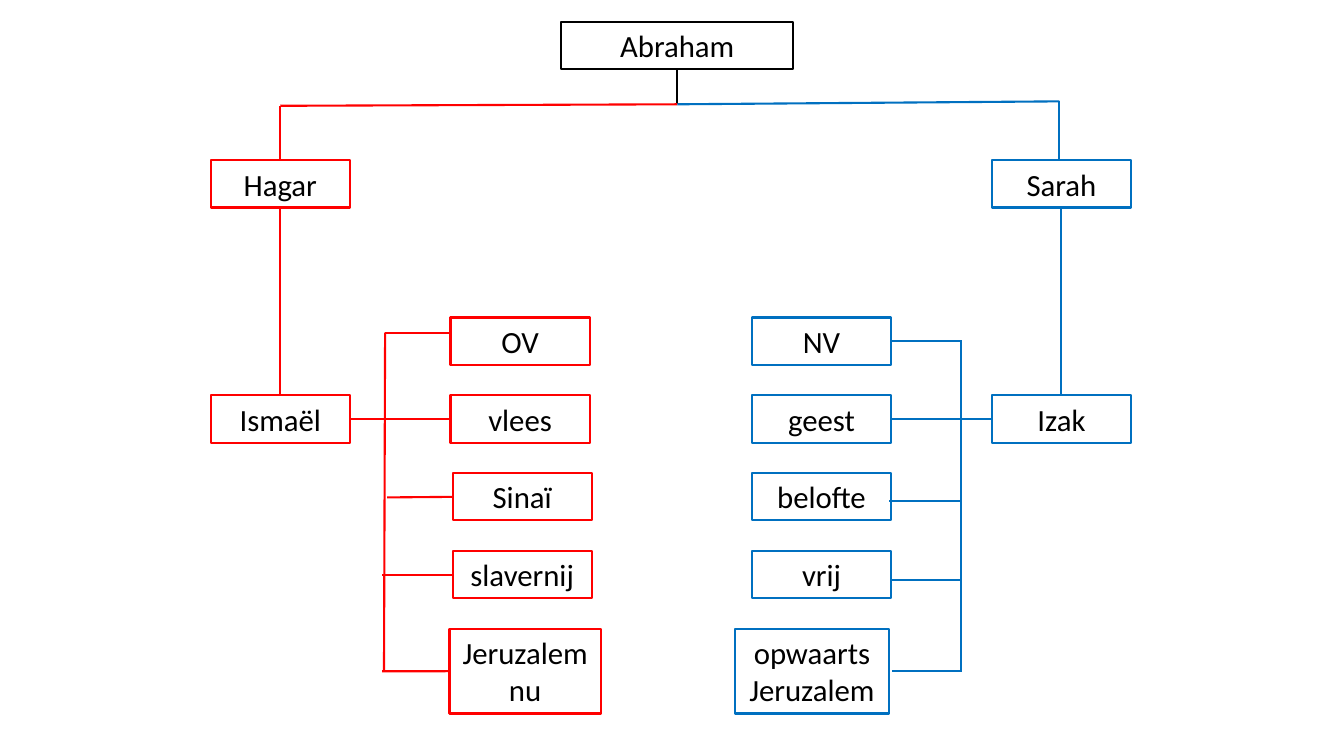
from dataclasses import dataclass
from typing import NamedTuple

from lxml.etree import SubElement
from pptx import Presentation
from pptx.dml.color import RGBColor
from pptx.enum.shapes import MSO_CONNECTOR, MSO_SHAPE
from pptx.enum.text import MSO_ANCHOR, MSO_AUTO_SIZE, PP_ALIGN
from pptx.oxml.ns import qn
from pptx.util import Pt


@dataclass(frozen=True)
class Theme:
    ink: RGBColor = RGBColor(0, 0, 0)
    red: RGBColor = RGBColor(0xFF, 0, 0)
    blue: RGBColor = RGBColor(0, 0x70, 0xC0)
    font: str = "Calibri"
    size: float = 22
    line: float = 1.5


THEME = Theme()
TOP, LEFT, BOTTOM, RIGHT = range(4)


@dataclass(frozen=True)
class Box:
    text: str
    tone: RGBColor
    x: float
    y: float
    w: float = 99.4
    h: float = 33.8


class Joint(NamedTuple):
    """The middle of one side of a named box."""
    name: str
    side: int


class Point(NamedTuple):
    x: float
    y: float


End = Joint | Point


class Link(NamedTuple):
    tone: RGBColor
    start: End
    end: End


FIRST, STEP = 226.8, 55.6
ROWS = [FIRST + STEP * i for i in range(5)]
WEST, EAST = 150.5, 708.5
FORK = Point(483.8, 74.5)
RED_TURN, BLUE_TURN = Point(200.2, 75.6), Point(756.7, 72.4)
RED_BUS, BLUE_BUS = 274.7, 686.2
FOOT = 479.5

BOXES = [
    Box("Abraham", THEME.ink, 401, 15.8, 165.6),
    Box("Hagar", THEME.red, WEST, 114.5),
    Box("Sarah", THEME.blue, EAST, 114.5),
    Box("Ismaël", THEME.red, WEST, ROWS[1]),
    Box("Izak", THEME.blue, EAST, ROWS[1]),
    *[Box(text, THEME.red, x, y) for text, x, y in zip(
        ("OV", "vlees", "Sinaï", "slavernij"),
        (321.8, 321.8, 323.3, 323.3), ROWS)],
    Box("Jeruzalem nu", THEME.red, 321.1, ROWS[4], 108, 60.5),
    *[Box(text, THEME.blue, 537.1, y) for text, y in zip(
        ("NV", "geest", "belofte", "vrij"), ROWS)],
    Box("opwaarts Jeruzalem", THEME.blue, 524.9, ROWS[4], 110.2, 60.5),
]

LINKS = [
    Link(THEME.ink, Joint("Abraham", BOTTOM), FORK),
    Link(THEME.red, FORK, RED_TURN),
    Link(THEME.red, RED_TURN, Joint("Hagar", TOP)),
    Link(THEME.blue, FORK, BLUE_TURN),
    Link(THEME.blue, BLUE_TURN, Point(BLUE_TURN.x, 114.5)),
    Link(THEME.red, Joint("Hagar", BOTTOM), Joint("Ismaël", TOP)),
    Link(THEME.blue, Joint("Sarah", BOTTOM), Joint("Izak", TOP)),
    Link(THEME.red, Joint("Ismaël", RIGHT), Joint("vlees", LEFT)),
    Link(THEME.blue, Joint("Izak", LEFT), Joint("geest", RIGHT)),
    Link(THEME.red, Point(RED_BUS + 0.4, 237.6), Point(RED_BUS - 0.4, FOOT)),
    Link(THEME.blue, Point(BLUE_BUS, 243.4), Point(BLUE_BUS, FOOT)),
    Link(THEME.red, Point(RED_BUS, 237.6), Point(321.8, 237.6)),
    Link(THEME.red, Point(276.5, 355.3), Joint("Sinaï", LEFT)),
    Link(THEME.red, Point(272.9, 410.5), Joint("slavernij", LEFT)),
    Link(THEME.red, Point(272.9, FOOT), Joint("Jeruzalem nu", LEFT)),
    *[Link(THEME.blue, Point(BLUE_BUS + 0.7, y), Point(x, y)) for x, y in (
        (636.5, 243.4), (635, 357.8), (636.5, 414), (637.2, FOOT))],
]


def put(target, values: dict) -> None:
    """Set each named attribute on the target."""
    for name, value in values.items():
        setattr(target, name, value)


def stroke(shape, tone: RGBColor) -> None:
    shape.line.color.rgb = tone
    shape.line.width = Pt(THEME.line)


def draw_box(slide, box: Box):
    shape = slide.shapes.add_shape(
        MSO_SHAPE.RECTANGLE, Pt(box.x), Pt(box.y), Pt(box.w), Pt(box.h))
    shape.shadow.inherit = False
    shape.fill.background()
    stroke(shape, box.tone)
    frame = shape.text_frame
    put(frame, {"word_wrap": True, "vertical_anchor": MSO_ANCHOR.TOP,
                "auto_size": MSO_AUTO_SIZE.SHAPE_TO_FIT_TEXT})
    line = frame.paragraphs[0]
    put(line, {"text": box.text, "alignment": PP_ALIGN.CENTER})
    font = line.runs[0].font
    put(font, {"name": THEME.font, "size": Pt(THEME.size)})
    font.color.rgb = THEME.ink
    return shape


def draw_link(slide, link: Link, shapes: dict) -> None:
    spots = [Pt(v) for end in (link.start, link.end)
             for v in (end if isinstance(end, Point) else (0, 0))]
    wire = slide.shapes.add_connector(MSO_CONNECTOR.STRAIGHT, *spots)
    for end, join in ((link.start, wire.begin_connect),
                      (link.end, wire.end_connect)):
        if isinstance(end, Joint):
            join(shapes[end.name], end.side)
    stroke(wire, link.tone)
    SubElement(wire._element.spPr, qn("a:effectLst"))


def main() -> None:
    deck = Presentation()
    put(deck, {"slide_width": Pt(960), "slide_height": Pt(540)})
    slide = deck.slides.add_slide(deck.slide_layouts[6])
    shapes = {box.text: draw_box(slide, box) for box in BOXES}
    for link in LINKS:
        draw_link(slide, link, shapes)
    deck.save("out.pptx")


if __name__ == "__main__":
    main()
